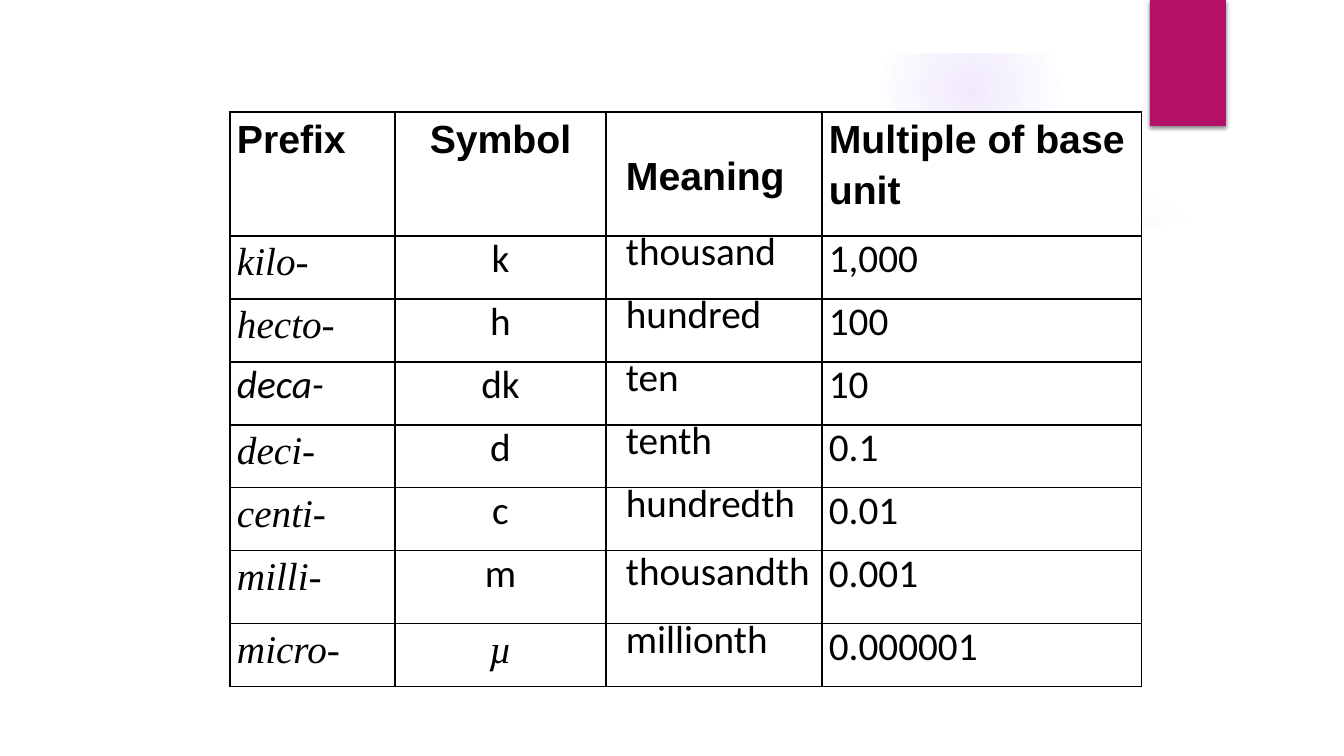
from lxml import etree
from pptx import Presentation
from pptx import util as u
from pptx.dml.color import RGBColor
from pptx.enum import shapes, text
from pptx.oxml import parse_xml
from pptx.oxml.ns import qn

PX = 914400 / 100.8
NS = 'xmlns:a="http://schemas.openxmlformats.org/drawingml/2006/main"'
THEME = {
    "white": "FFFFFF", "ink": "000000", "accent": "B31166", "glow": "9B6BF2",
    "size": 28, "head": "Arial", "body": "Calibri", "serif": "Times New Roman",
}


def px(n):
    return u.Emu(round(n * PX))


def write(cell, words, font, bold=False, italic=False, align=None,
          line=u.Pt(12), indent=0, top=0, anchor=text.MSO_ANCHOR.TOP):
    cell.margin_left = cell.margin_right = px(7)
    cell.margin_top, cell.margin_bottom = top, 0
    cell.vertical_anchor = anchor
    para = cell.text_frame.paragraphs[0]
    para.alignment = align
    para.line_spacing = line
    para.space_after = u.Pt(10)
    para._p.get_or_add_pPr().set("marL", str(px(indent)))
    run = para.add_run()
    run.text = words
    run.font.name, run.font.size = font, u.Pt(THEME["size"])
    run.font.bold, run.font.italic = bold, italic
    run.font.color.rgb = RGBColor.from_string(THEME["ink"])


prs = Presentation()
prs.slide_width, prs.slide_height = px(1344), px(756)
slide = prs.slides.add_slide(prs.slide_layouts[6])
kinds = shapes.MSO_SHAPE

# Soft glows: left, top, size, then (position, opacity) stops in percent
glows = [
    (949, 184, 310, [(0, 7), (36, 6), (69, 0)]),
    (882, 1, 176, [(0, 14), (36, 7), (73, 0)]),
]
for left, top, size, stops in glows:
    disc = slide.shapes.add_shape(kinds.OVAL, px(left), px(top), px(size), px(size))
    disc.shadow.inherit = False
    disc.line.fill.background()
    disc.fill.background()
    marks = "".join(
        f'<a:gs pos="{pos * 1000}"><a:srgbClr val="{THEME["glow"]}">'
        f'<a:alpha val="{alpha * 1000}"/></a:srgbClr></a:gs>' for pos, alpha in stops)
    grad = parse_xml(
        f'<a:gradFill {NS}><a:gsLst>{marks}</a:gsLst><a:path path="circle">'
        '<a:fillToRect l="50000" t="50000" r="50000" b="50000"/></a:path></a:gradFill>')
    props = disc._element.spPr
    props.replace(props.find(qn("a:noFill")), grad)

# White panel with a sagging top edge, and the white frame around it
edge = [(50, 206), (136, 217), (285, 229), (448, 243), (714, 250), (956, 243),
        (1069, 234), (1153, 226), (1238, 215), (1294, 206)]
path = slide.shapes.build_freeform(*edge[0], scale=PX)
path.add_line_segments(edge[1:] + [(1294, 706), (50, 706)], close=True)
panel = path.convert_to_shape()
frame = slide.shapes.add_shape(kinds.FRAME, 0, 0, px(1344), px(756))
frame.adjustments[0] = 0.07
tab = slide.shapes.add_shape(kinds.RECTANGLE, px(1150), 0, px(76), px(126))
for shape, hue in [(panel, "white"), (frame, "white"), (tab, "accent")]:
    shape.shadow.inherit = False
    shape.line.fill.background()
    shape.fill.solid()
    shape.fill.fore_color.rgb = RGBColor.from_string(THEME[hue])
tab._element.spPr.find(qn("a:effectLst")).append(parse_xml(
    f'<a:outerShdw {NS} blurRad="38100" dist="25400" dir="5400000" rotWithShape="0">'
    '<a:srgbClr val="000000"><a:alpha val="45000"/></a:srgbClr></a:outerShdw>'))

# Table of metric prefixes
rows = [
    ("Prefix", "Symbol", "Meaning", "Multiple of base unit"),
    ("kilo-", "k", "thousand", "1,000"),
    ("hecto-", "h", "hundred", "100"),
    ("deca-", "dk", "ten", "10"),
    ("deci-", "d", "tenth", "0.1"),
    ("centi-", "c", "hundredth", "0.01"),
    ("milli-", "m", "thousandth", "0.001"),
    ("micro-", "µ", "millionth", "0.000001"),
]
wide = [165, 211, 216, 320]
high = [124, 63, 63, 63, 63, 63, 73, 63]
table = slide.shapes.add_table(len(rows), len(wide), px(230), px(112),
                               px(sum(wide)), px(sum(high))).table
table.first_row = table.horz_banding = False
for col, width in zip(table.columns, wide):
    col.width = px(width)
for row, height in zip(table.rows, high):
    row.height = px(height)

for r, row in enumerate(rows):
    for c, words in enumerate(row):
        cell = table.cell(r, c)
        form = {"font": THEME["body"]}
        if c == 1:
            form["align"] = text.PP_ALIGN.CENTER
        if c == 2:
            form.update(indent=13, anchor=text.MSO_ANCHOR.MIDDLE)
        if r == 0:
            form.update(font=THEME["head"], bold=True, line=1.15)
            cell.fill.solid()
            cell.fill.fore_color.rgb = RGBColor.from_string(THEME["white"])
        else:
            cell.fill.background()
            if c != 2:
                form["top"] = u.Pt(22)
            if c == 0 or words == "µ":
                form["italic"] = True
                if words != "deca-":
                    form["font"] = THEME["serif"]
        write(cell, words, **form)
        for n, side in enumerate("LRTB"):
            cell._tc.get_or_add_tcPr().insert(n, etree.fromstring(
                f'<a:ln{side} {NS} w="12700"><a:solidFill>'
                f'<a:srgbClr val="{THEME["ink"]}"/></a:solidFill></a:ln{side}>'))

prs.save("out.pptx")
